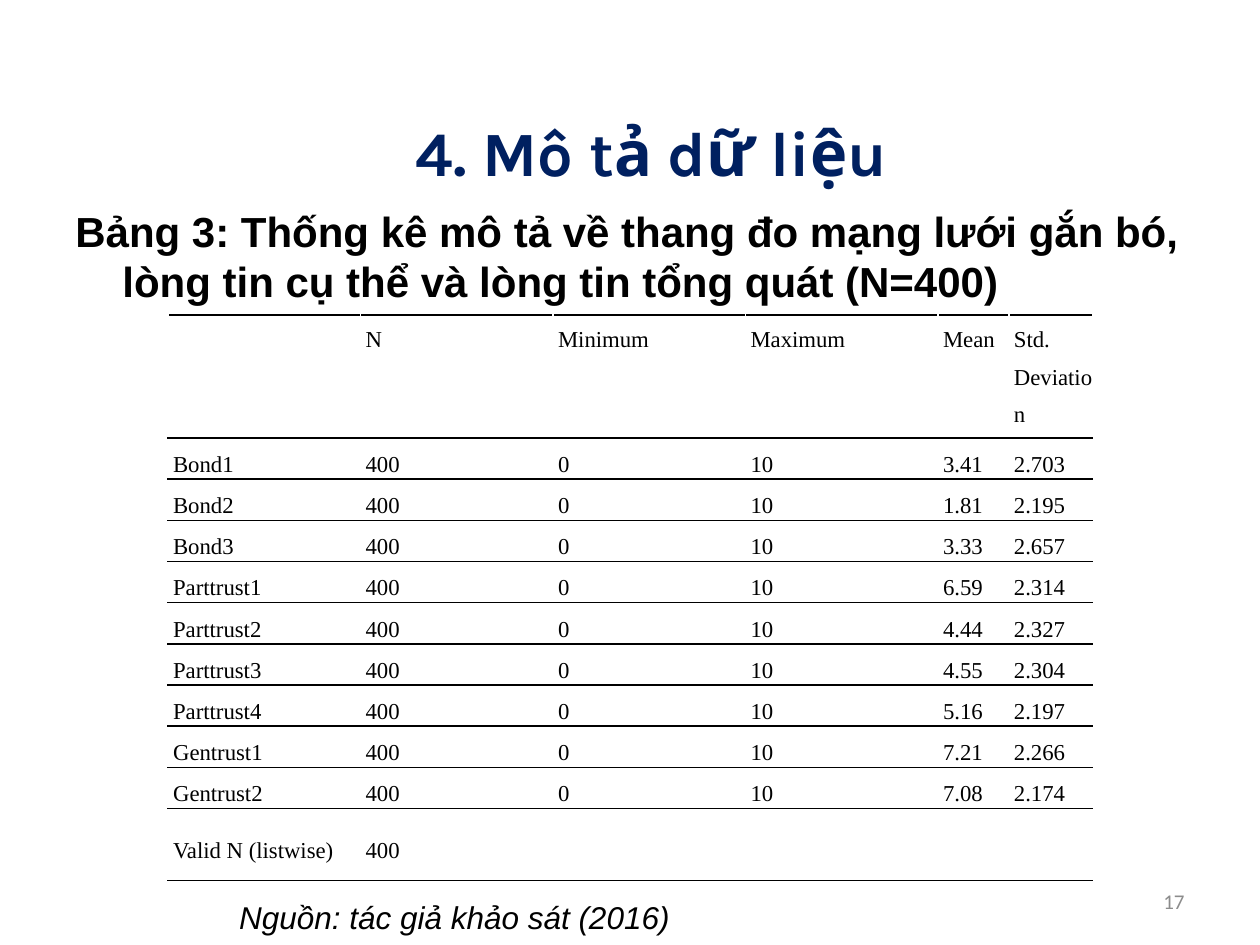
"""Build the slide with descriptive statistics of the bonding and trust scales."""
from lxml.etree import SubElement
from pptx import Presentation
from pptx.dml.color import RGBColor
from pptx.enum.text import MSO_ANCHOR, PP_ALIGN
from pptx.oxml.ns import qn
from pptx.util import Cm, Pt

COLORS = {"title": "002060", "text": "000000", "number": "8C8C8C", "cell": "FFFFFF"}


def format_text(text_frame, font_name, size, color, alignment, bold=False, italic=False):
    text_frame.word_wrap = True
    for paragraph in text_frame.paragraphs:
        paragraph.alignment = alignment
        for run in paragraph.runs:
            run.font.name = font_name
            run.font.size = Pt(size)
            run.font.bold = bold
            run.font.italic = italic
            run.font.color.rgb = RGBColor.from_string(COLORS[color])


def add_border(cell, side):
    line = SubElement(cell._tc.get_or_add_tcPr(), qn(f"a:{side}"), w=str(Pt(1)))
    fill = SubElement(line, qn("a:solidFill"))
    SubElement(fill, qn("a:srgbClr"), val=COLORS["text"])


presentation = Presentation()
presentation.slide_width = Cm(25.4)
presentation.slide_height = Cm(19.05)
slide = presentation.slides.add_slide(presentation.slide_layouts[5])

title = slide.shapes.title
title.left, title.top, title.width, title.height = Cm(1.7), Cm(2.11), Cm(22.86), Cm(1.9)
title.text_frame.text = "4. Mô tả dữ liệu"
title.text_frame.vertical_anchor = MSO_ANCHOR.MIDDLE
format_text(title.text_frame, "Karla", 36, "title", PP_ALIGN.CENTER, bold=True)

caption = slide.shapes.add_textbox(Cm(1.27), Cm(4.01), Cm(22.86), Cm(2.3))
caption.text_frame.text = (
    "Bảng 3: Thống kê mô tả về thang đo mạng lưới gắn bó, "
    "lòng tin cụ thể và lòng tin tổng quát (N=400)"
)
format_text(caption.text_frame, "Arial", 24, "text", PP_ALIGN.LEFT, bold=True)
caption_properties = caption.text_frame.paragraphs[0]._p.get_or_add_pPr()
caption_properties.set("marL", str(Cm(0.95)))
caption_properties.set("indent", str(-Cm(0.95)))

scales = [
    ("Bond1", "3.41", "2.703"),
    ("Bond2", "1.81", "2.195"),
    ("Bond3", "3.33", "2.657"),
    ("Parttrust1", "6.59", "2.314"),
    ("Parttrust2", "4.44", "2.327"),
    ("Parttrust3", "4.55", "2.304"),
    ("Parttrust4", "5.16", "2.197"),
    ("Gentrust1", "7.21", "2.266"),
    ("Gentrust2", "7.08", "2.174"),
]
rows = [
    ("", "N", "Minimum", "Maximum", "Mean", "Std. Deviation"),
    *((name, "400", "0", "10", mean, deviation) for name, mean, deviation in scales),
    ("Valid N (listwise)", "400", "", "", "", ""),
]
column_widths = [3.88] * 4 + [1.43, 1.68]
row_heights = [2.42] + [0.83] * len(scales) + [1.45]

table = slide.shapes.add_table(
    len(rows), len(column_widths), Cm(3.39), Cm(6.35),
    Cm(sum(column_widths)), Cm(sum(row_heights)),
).table
table.first_row = False
table.horz_banding = False
for column, width in zip(table.columns, column_widths):
    column.width = Cm(width)
for row_index, (values, height) in enumerate(zip(rows, row_heights)):
    table.rows[row_index].height = Cm(height)
    for column_index, value in enumerate(values):
        cell = table.cell(row_index, column_index)
        cell.margin_left = cell.margin_right = cell.margin_top = cell.margin_bottom = 0
        cell.vertical_anchor = MSO_ANCHOR.MIDDLE if row_index else MSO_ANCHOR.TOP
        add_border(cell, "lnT")
        add_border(cell, "lnB")
        cell.fill.solid()
        cell.fill.fore_color.rgb = RGBColor.from_string(COLORS["cell"])
        if value:
            cell.text_frame.text = value
            format_text(cell.text_frame, "Times New Roman", 13, "text", PP_ALIGN.JUSTIFY)
            paragraph = cell.text_frame.paragraphs[0]
            paragraph.line_spacing = 1.5
            paragraph._p.get_or_add_pPr().set("marL", str(Cm(0.1)))

footers = [
    ("17", 18.2, 17.65, 5.93, "Calibri", 12, "number", PP_ALIGN.RIGHT, False),
    ("Nguồn: tác giả khảo sát (2016)", 4.57, 17.98, 14.68, "Arial", 18, "text", PP_ALIGN.LEFT, True),
]
for text, left, top, width, font_name, size, color, alignment, italic in footers:
    footer = slide.shapes.add_textbox(Cm(left), Cm(top), Cm(width), Cm(1.02))
    footer.text_frame.text = text
    footer.text_frame.vertical_anchor = MSO_ANCHOR.MIDDLE
    format_text(footer.text_frame, font_name, size, color, alignment, italic=italic)

presentation.save("out.pptx")
